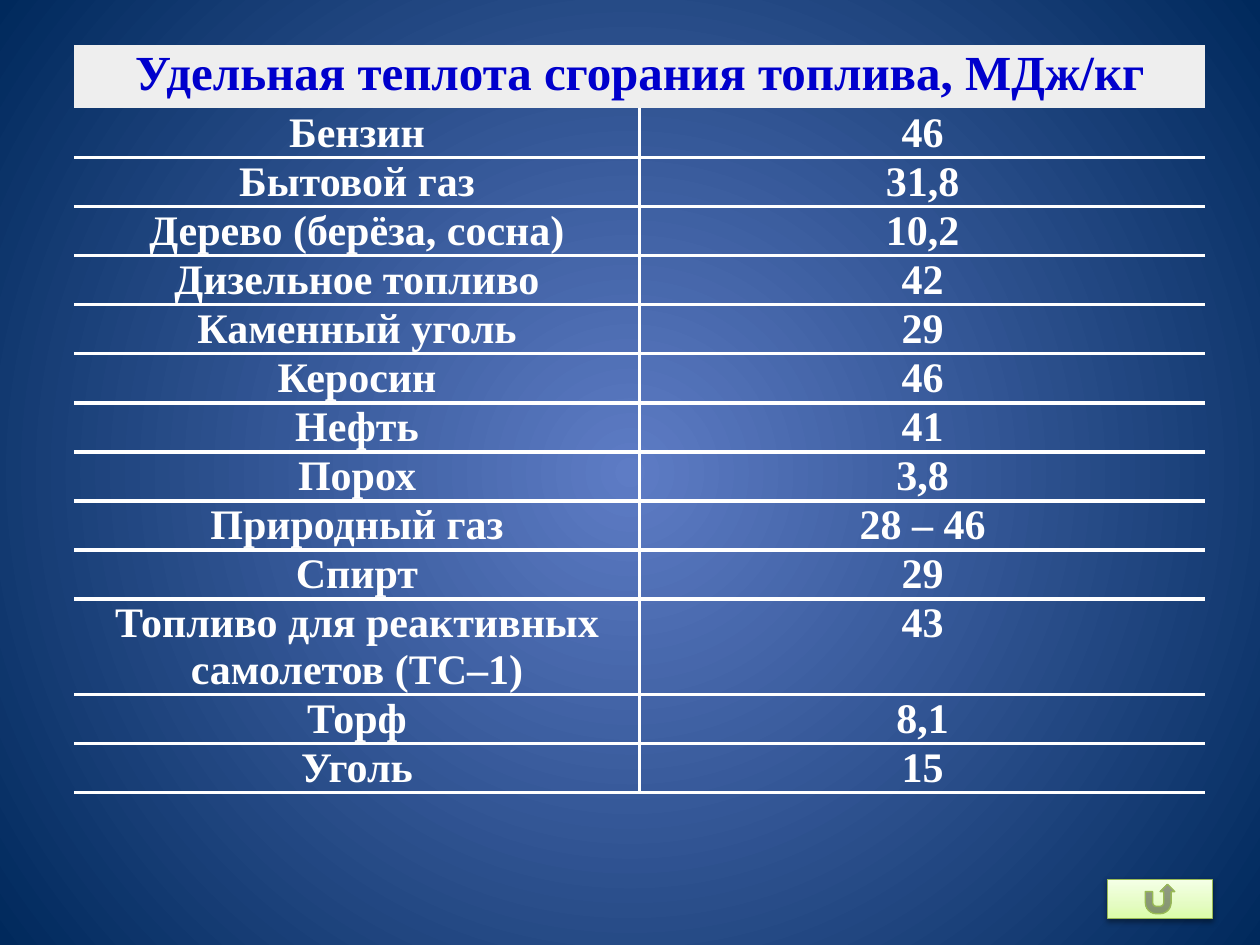
from pptx import Presentation
from pptx.dml.color import RGBColor
from pptx.enum.shapes import MSO_SHAPE as Kind
from pptx.enum.text import PP_ALIGN as Align
from pptx.oxml import parse_xml
from pptx.oxml.ns import nsdecls, qn
from pptx.util import Pt

FONT = "Times New Roman"
WHITE = "FFFFFF"
TITLE = "Удельная теплота сгорания топлива, МДж/кг"
FUELS = [
    ("Бензин", "46"),
    ("Бытовой газ", "31,8"),
    ("Дерево (берёза, сосна)", "10,2"),
    ("Дизельное топливо", "42"),
    ("Каменный уголь", "29"),
    ("Керосин", "46"),
    ("Нефть", "41"),
    ("Порох", "3,8"),
    ("Природный газ", "28 – 46"),
    ("Спирт", "29"),
    ("Топливо для реактивных самолетов (ТС–1)", "43"),
    ("Торф", "8,1"),
    ("Уголь", "15"),
]


def paint(color, code):
    color.rgb = RGBColor.from_string(code)


def blend(fill, root, stops, shade):
    """Fill with a gradient; shade is the XML of its direction."""
    fill.solid()
    old = next(root.iter(qn("a:solidFill")))
    marks = "".join(
        f'<a:gs pos="{pos * 1000}"><a:srgbClr val="{code}"/></a:gs>'
        for pos, code in stops)
    new = parse_xml(
        f'<a:gradFill {nsdecls("a")} rotWithShape="1">'
        f"<a:gsLst>{marks}</a:gsLst>{shade}</a:gradFill>")
    old.getparent().replace(old, new)


def edge(cell, sides):
    """Draw white borders on the named sides and none on the others."""
    props = cell._tc.get_or_add_tcPr()
    for side in "LRTB":
        ink = (f'<a:solidFill><a:srgbClr val="{WHITE}"/></a:solidFill>'
               if side in sides else "<a:noFill/>")
        props.append(parse_xml(
            f'<a:ln{side} {nsdecls("a")} w="{Pt(2.25)}">{ink}</a:ln{side}>'))


def write(cell, text, size, code):
    cell.margin_left = cell.margin_right = Pt(0.75)
    cell.margin_top = cell.margin_bottom = Pt(0.75)
    para = cell.text_frame.paragraphs[0]
    para.alignment = Align.CENTER
    run = para.add_run()
    run.text = text
    font = run.font
    font.name, font.size, font.bold = FONT, Pt(size), True
    paint(font.color, code)


def add_grid(slide):
    count = len(FUELS) + 1
    frame = slide.shapes.add_table(
        count, 2, Pt(42.4), Pt(26), Pt(646.4), Pt(36 + 28 * len(FUELS)))
    table = frame.table
    for row in table.rows:
        row.height = Pt(28)
    table.rows[0].height = Pt(36)

    # Title row
    head = table.cell(0, 0)
    head.merge(table.cell(0, 1))
    for col in range(2):
        cell = table.cell(0, col)
        edge(cell, "")
        cell.fill.solid()
        paint(cell.fill.fore_color, "EEEEEE")
    write(head, TITLE, 28, "0000CC")

    # Fuel rows
    for num, pair in enumerate(FUELS, 1):
        for col, text in enumerate(pair):
            cell = table.cell(num, col)
            edge(cell, "RL"[col] + ("B" if num == 1 else "TB"))
            cell.fill.background()
            write(cell, text, 24, WHITE)


def add_button(slide):
    shape = slide.shapes.add_shape(
        Kind.ACTION_BUTTON_RETURN, Pt(632.9), Pt(502.5), Pt(60), Pt(22.5))
    props = shape.element.spPr
    blend(shape.fill, props,
          [(0, "DAFDA7"), (35, "E4FCC2"), (100, "F5FFE7")],
          '<a:lin ang="16200000" scaled="1"/>')
    paint(shape.line.color, "98B955")
    shape.line.width = Pt(0.75)

    # Soft shadow below
    shape.shadow.inherit = False
    props.find(qn("a:effectLst")).append(parse_xml(
        f'<a:outerShdw {nsdecls("a")} blurRad="{Pt(3.1)}" dist="{Pt(1.6)}" '
        'dir="5400000" rotWithShape="0"><a:srgbClr val="000000">'
        '<a:alpha val="38000"/></a:srgbClr></a:outerShdw>'))


def main():
    deck = Presentation()
    deck.slide_width, deck.slide_height = Pt(720), Pt(540)
    slide = deck.slides.add_slide(deck.slide_layouts[6])
    blend(slide.background.fill, slide.element,
          [(0, "5E7CC5"), (100, "00295C")],
          '<a:path path="circle"><a:fillToRect l="50000" t="50000" '
          'r="50000" b="50000"/></a:path>')
    add_grid(slide)
    add_button(slide)
    deck.save("out.pptx")


if __name__ == "__main__":
    main()
